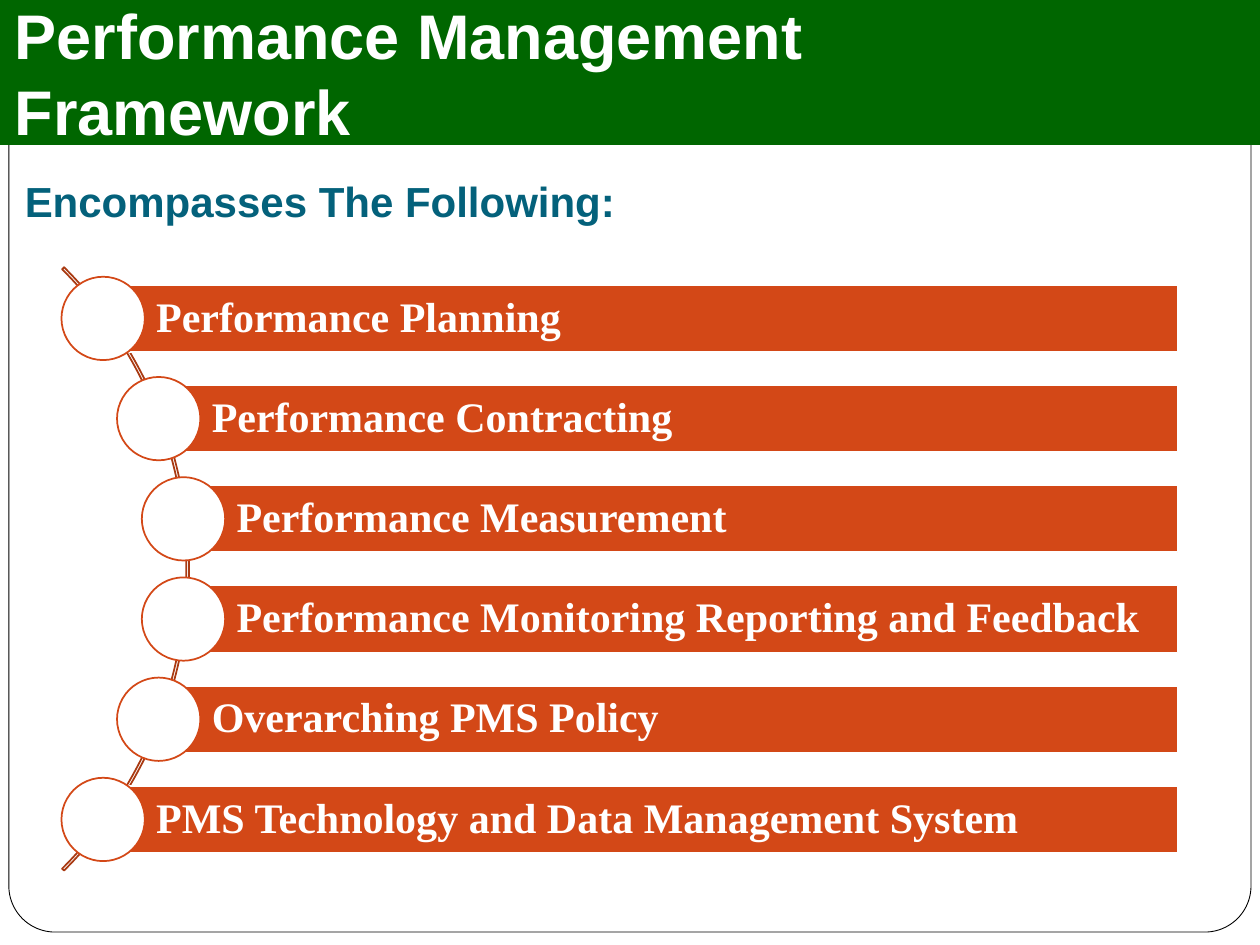
"""Build the Performance Management Framework slide."""
from dataclasses import dataclass

from pptx import Presentation
from pptx.dml.color import RGBColor
from pptx.enum.shapes import MSO_SHAPE
from pptx.enum.text import MSO_ANCHOR, PP_ALIGN
from pptx.util import Cm, Pt

RECT, OVAL = MSO_SHAPE.RECTANGLE, MSO_SHAPE.OVAL
ROUNDED, ARC = MSO_SHAPE.ROUNDED_RECTANGLE, MSO_SHAPE.BLOCK_ARC
MIDDLE, BOTTOM = MSO_ANCHOR.MIDDLE, MSO_ANCHOR.BOTTOM
LEFT = PP_ALIGN.LEFT


@dataclass(frozen=True)
class Theme:
    white: str = "FFFFFF"
    black: str = "000000"
    green: str = "006600"
    teal: str = "04617B"
    orange: str = "D34817"
    rust: str = "A93A12"
    heading_font: str = "Arial"
    body_font: str = "Times New Roman"
    title_size: int = 36
    body_size: int = 24


theme = Theme()


def add_box(kind, left, top, width, height, fill=None, line=None, weight=1):
    sp = s.shapes.add_shape(kind, Cm(left), Cm(top), Cm(width), Cm(height))
    sp.shadow.inherit = False
    for part, color in ((sp.fill, fill), (sp.line.fill, line)):
        if color:
            part.solid()
            part.fore_color.rgb = RGBColor.from_string(color)
        else:
            part.background()
    if line:
        sp.line.width = Pt(weight)
    return sp


def write(sp, text, font, size, color, anchor, insets):
    tf = sp.text_frame
    tf.word_wrap = True
    tf.vertical_anchor = anchor
    tf.margin_left, tf.margin_top, tf.margin_right, tf.margin_bottom = map(Cm, insets)
    p = tf.paragraphs[0]
    p.alignment = LEFT
    r = p.add_run()
    r.text = text
    r.font.name = font
    r.font.size = Pt(size)
    r.font.bold = True
    r.font.color.rgb = RGBColor.from_string(color)
    return p


prs = Presentation()
prs.slide_width, prs.slide_height = Cm(25.4), Cm(19.05)
s = prs.slides.add_slide(prs.slide_layouts[6])

frame = add_box(ROUNDED, 0.18, 0.2, 25.04, 18.59, theme.white, theme.black, 0.5)
frame.adjustments[0] = 0.05
add_box(RECT, 0, -0.05, 25.4, 2.97, theme.green)

headings = [
    ("Performance Management Framework", 0.3, -0.2, 22, 3.18, theme.title_size, theme.white),
    ("Encompasses The Following:", 0.5, 2.92, 20.32, 1.63, theme.body_size, theme.teal),
]
for text, left, top, width, height, size, color in headings:
    tb = s.shapes.add_textbox(Cm(left), Cm(top), Cm(width), Cm(height))
    write(tb, text, theme.heading_font, size, color, BOTTOM, (0, 0.13, 0, 0))

first_center, pitch = 6.42, 2.02
bar_right, bar_height, circle_size = 23.74, 1.35, 1.68
items = [
    ("Performance Planning", 2.08),
    ("Performance Contracting", 3.2),
    ("Performance Measurement", 3.7),
    ("Performance Monitoring Reporting and Feedback", 3.7),
    ("Overarching PMS Policy", 3.2),
    ("PMS Technology and Data Management System", 2.08),
]

arc = add_box(ARC, -13.39, 2.87, 17.2, 17.2, line=theme.rust)
for i, value in enumerate((189, 27, 0.0032)):
    arc.adjustments[i] = value

for i, (text, x) in enumerate(items):
    y = first_center + i * pitch
    bar = add_box(RECT, x, y - bar_height / 2, bar_right - x, bar_height,
                  theme.orange, theme.white)
    p = write(bar, text, theme.body_font, theme.body_size, theme.white, MIDDLE,
              (1.07, 0.18, 0.18, 0.18))
    p.line_spacing = 0.9
    add_box(OVAL, x - circle_size / 2, y - circle_size / 2, circle_size, circle_size,
            theme.white, theme.orange)

prs.save("out.pptx")
